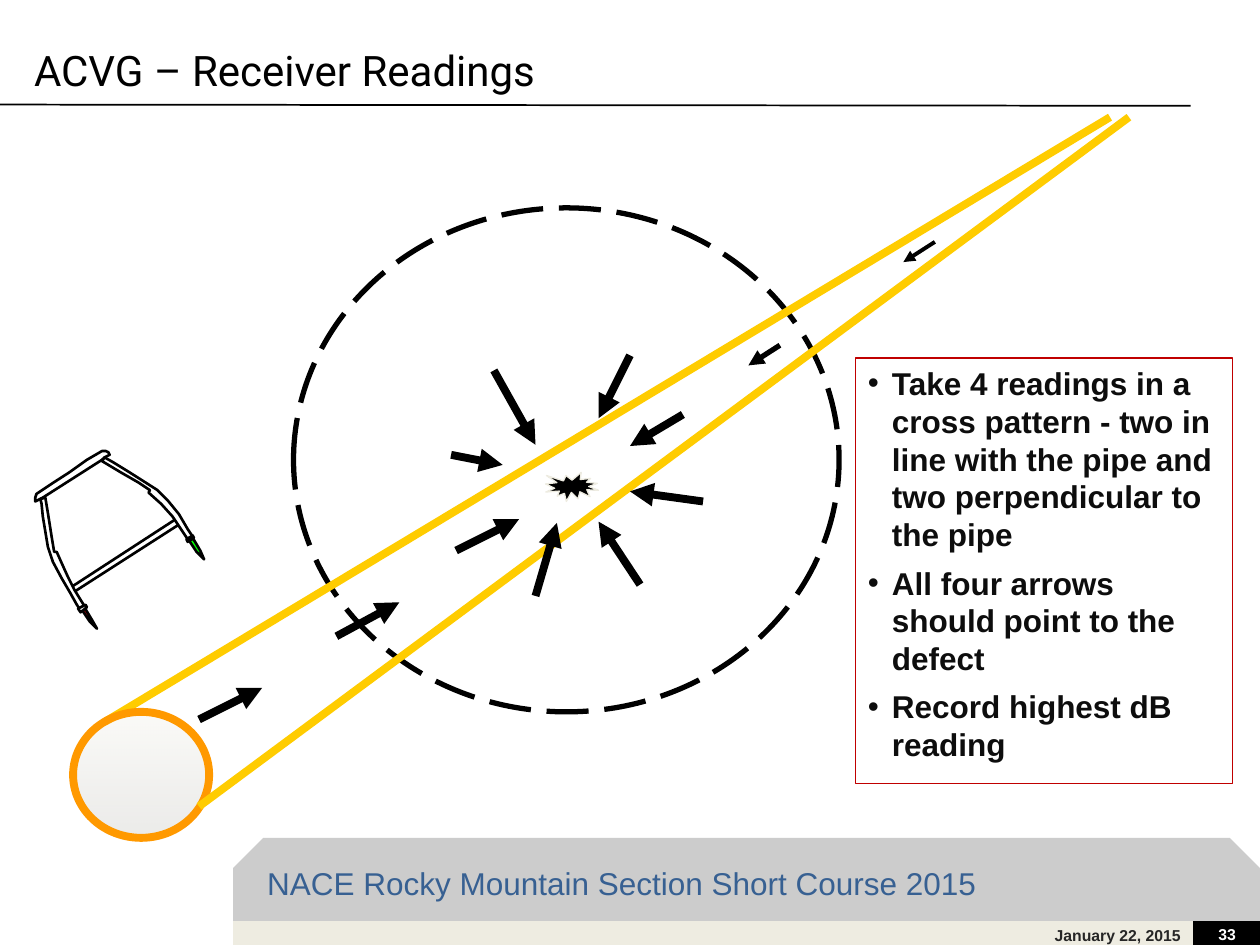
from dataclasses import dataclass
from pptx import Presentation
from pptx.dml.color import RGBColor
from pptx.enum.dml import MSO_LINE
from pptx.enum.shapes import MSO_CONNECTOR, MSO_SHAPE
from pptx.enum.text import MSO_ANCHOR, MSO_AUTO_SIZE, PP_ALIGN
from pptx.oxml.ns import qn
from pptx.util import Inches, Pt
from lxml import etree

STRAIGHT = MSO_CONNECTOR.STRAIGHT
RECT, OVAL = MSO_SHAPE.RECTANGLE, MSO_SHAPE.OVAL
SNIP, BURST = MSO_SHAPE.SNIP_2_SAME_RECTANGLE, MSO_SHAPE.EXPLOSION1
DASH = MSO_LINE.LONG_DASH
LEFT, MID, RIGHT = PP_ALIGN.LEFT, PP_ALIGN.CENTER, PP_ALIGN.RIGHT
TOP, CENTER, BOTTOM = MSO_ANCHOR.TOP, MSO_ANCHOR.MIDDLE, MSO_ANCHOR.BOTTOM
GROW = MSO_AUTO_SIZE.SHAPE_TO_FIT_TEXT


@dataclass(frozen=True)
class Theme:
    head: str = "Roboto"
    body: str = "Arial"
    black: str = "000000"
    white: str = "FFFFFF"
    ink: str = "0D0D0D"
    date: str = "262626"
    blue: str = "376092"
    grey: str = "CCCCCC"
    cream: str = "EEECE1"
    shade: str = "AAA9A1"
    red: str = "C00000"
    gold: str = "FFCC00"
    orange: str = "FF9900"
    tip_red: str = "FF0000"
    tip_green: str = "00FF00"
    big: int = 24
    mid: int = 18
    small: int = 9


T = Theme()

NOTES = (
    "Take 4 readings in a cross pattern - two in line with the pipe and two "
    "perpendicular to the pipe",
    "All four arrows should point to the defect",
    "Record highest dB reading",
)

# Each arrow: tail x, y, tip x, y, width
ARROWS = (
    # Along the pipe
    (1.58, 5.71, 2.08, 5.46, 4.5), (2.67, 5.05, 3.17, 4.78, 4.5),
    (3.62, 4.37, 4.12, 4.12, 4.5), (5.42, 3.29, 5, 3.54, 4.5),
    (6.19, 2.74, 5.94, 2.9, 3), (7.42, 1.92, 7.17, 2.08, 2.25),
    # Around the defect
    (5.08, 4.64, 4.75, 4.14, 4.5), (3.92, 2.94, 4.25, 3.53, 4.5),
    (4.25, 4.73, 4.42, 4.15, 4.5), (5.58, 3.98, 5, 3.9, 4.5),
    (5, 2.82, 4.75, 3.32, 4.5), (3.58, 3.61, 3.99, 3.69, 4.5),
)

# Receiver parts: fill and outline points
PARTS = (
    (T.tip_green, ((1.53, 4.27), (1.5, 4.29), (1.56, 4.38), (1.62, 4.44), (1.59, 4.37))),
    (T.tip_red, ((0.67, 4.82), (0.65, 4.84), (0.71, 4.93), (0.77, 4.99), (0.73, 4.92))),
    # Grip
    (None, ((0.83, 3.63), (0.87, 3.61), (0.86, 3.59), (0.84, 3.58), (0.81, 3.58),
            (0.69, 3.65), (0.55, 3.75), (0.41, 3.84), (0.29, 3.92), (0.28, 3.95),
            (0.28, 3.98), (0.32, 3.96), (0.34, 3.95), (0.81, 3.65))),
    # Left arm
    (None, ((0.32, 3.96), (0.33, 4), (0.34, 4.1), (0.36, 4.22), (0.38, 4.34),
            (0.42, 4.46), (0.49, 4.59), (0.56, 4.71), (0.61, 4.8), (0.63, 4.83),
            (0.67, 4.81), (0.59, 4.68), (0.54, 4.58), (0.49, 4.47), (0.45, 4.38),
            (0.43, 4.38), (0.41, 4.26), (0.38, 4.07), (0.36, 3.95))),
    # Right arm
    (None, ((0.83, 3.63), (0.9, 3.67), (1.03, 3.75), (1.14, 3.82), (1.25, 3.89),
            (1.33, 3.97), (1.42, 4.08), (1.49, 4.2), (1.53, 4.26), (1.49, 4.28),
            (1.43, 4.19), (1.37, 4.1), (1.28, 4), (1.18, 3.91), (1.19, 3.89),
            (1.1, 3.83), (0.96, 3.75), (0.81, 3.66))),
    # Collars
    (T.white, ((1.53, 4.25), (1.48, 4.28), (1.49, 4.3), (1.54, 4.27))),
    (T.white, ((0.68, 4.8), (0.62, 4.83), (0.64, 4.86), (0.69, 4.82))),
)
BARS = ((1.38, 4.13, 0.58, 4.65), (1.41, 4.17, 0.6, 4.69))


def rgb(code):
    return RGBColor.from_string(code)


def paint(item, fill=None, line=None, width=1.0):
    item.shadow.inherit = False
    if fill:
        item.fill.solid()
        item.fill.fore_color.rgb = rgb(fill)
    else:
        item.fill.background()
    if line:
        item.line.color.rgb = rgb(line)
        item.line.width = Pt(width)
    else:
        item.line.fill.background()


def shape(pool, kind, box, fill=None, line=None, width=1.0):
    item = pool.add_shape(kind, *map(Inches, box))
    paint(item, fill, line, width)
    return item


def stroke(pool, ends, color, width, arrow=False):
    item = pool.add_connector(STRAIGHT, *map(Inches, ends))
    item.line.color.rgb = rgb(color)
    item.line.width = Pt(width)
    if arrow:
        etree.SubElement(item.line._get_or_add_ln(), qn("a:tailEnd"), type="triangle")
    etree.SubElement(item.element.spPr, qn("a:effectLst"))


def outline(pool, points, fill):
    spots = [(Inches(x), Inches(y)) for x, y in points]
    pen = pool.build_freeform(*spots[0], scale=1.0)
    pen.add_line_segments(spots[1:], close=True)
    paint(pen.convert_to_shape(), fill, T.black, 1.5)


def write(para, words, size, color, bold=False, face=T.body, align=LEFT):
    para.alignment = align
    run = para.add_run()
    run.text = words
    font = run.font
    font.name, font.size, font.bold = face, Pt(size), bold
    font.color.rgb = rgb(color)


def label(pool, box, words, size, color, align, anchor=TOP, bold=False, wrap=True):
    frame = pool.add_textbox(*map(Inches, box)).text_frame
    frame.word_wrap = wrap
    frame.vertical_anchor = anchor
    write(frame.paragraphs[0], words, size, color, bold, align=align)
    return frame


def bullets(pool, box, notes):
    item = shape(pool, RECT, box, None, T.red, 0.75)
    frame = item.text_frame
    frame.word_wrap = True
    frame.vertical_anchor = TOP
    frame.auto_size = GROW
    for i, words in enumerate(notes):
        para = frame.paragraphs[0] if i == 0 else frame.add_paragraph()
        props = para._p.get_or_add_pPr()
        props.set("marL", str(Inches(0.19)))
        props.set("indent", str(-Inches(0.19)))
        etree.SubElement(props, qn("a:buFont"), typeface=T.body)
        etree.SubElement(props, qn("a:buChar"), char="•")
        if i < len(notes) - 1:
            para.space_after = Pt(6)
        write(para, words, T.mid, T.ink, True)


def mouth(pool, box):
    item = shape(pool, OVAL, box, None, T.orange, 4.5)
    item.fill.gradient()
    item.fill.gradient_angle = 270
    looks = ((T.cream, 24), (T.shade, 23))
    for i, (stop, (color, alpha)) in enumerate(zip(item.fill.gradient_stops, looks)):
        stop.position = i
        stop.color.rgb = rgb(color)
    tints = item.element.spPr.find(qn("a:gradFill")).iter(qn("a:srgbClr"))
    for tint, (color, alpha) in zip(tints, looks):
        etree.SubElement(tint, qn("a:alpha"), val=str(alpha * 1000))


def heading(slide, words):
    title = slide.shapes.title
    title.left, title.top, title.width, title.height = map(Inches, (0.17, 0.17, 8.5, 0.76))
    title.text_frame.vertical_anchor = CENTER
    write(title.text_frame.paragraphs[0], words, T.big, T.black, face=T.head)


def main():
    deck = Presentation()
    deck.slide_width, deck.slide_height = Inches(10), Inches(7.5)
    slide = deck.slides.add_slide(deck.slide_layouts[5])
    pool = slide.shapes

    # Footer bands and title rule
    shape(pool, RECT, (1.85, 7.3, 8.15, 0.2), T.cream)
    shape(pool, RECT, (9.47, 7.3, 0.53, 0.2), T.black)
    band = shape(pool, SNIP, (1.85, 6.65, 8.15, 0.66), T.grey)
    band.adjustments[0], band.adjustments[1] = 0.363, 0
    stroke(pool, (0, 0.83, 9.45, 0.84), T.black, 1)

    # Search ring
    ring = shape(pool, OVAL, (2.33, 1.65, 4.33, 4), None, T.black, 3)
    ring.line.dash_style = DASH

    # Words
    label(pool, (7.91, 7.37, 1.56, 0.18), "January 22, 2015", T.small, T.date,
          RIGHT, BOTTOM, True, False)
    label(pool, (9.56, 7.39, 0.36, 0.15), "33", T.small, T.white,
          MID, BOTTOM, True, False)
    heading(slide, "ACVG – Receiver Readings")
    course = label(pool, (0.43, 6.81, 9.01, 0.4),
                   "NACE Rocky Mountain Section Short Course 2015", T.mid, T.blue, MID)
    course.auto_size = GROW
    bullets(pool, (6.79, 2.84, 2.99, 3.38), NOTES)

    # Pipe
    stroke(pool, (0.83, 5.73, 8.81, 0.93), T.gold, 4.5)
    mouth(pool, (0.58, 5.65, 1.08, 1))
    stroke(pool, (1.58, 6.4, 8.96, 0.93), T.gold, 4.5)

    # Readings
    for *ends, width in ARROWS:
        stroke(pool, ends, T.black, width, True)

    # Receiver
    frame = pool.add_group_shape().shapes
    for fill, points in PARTS:
        outline(frame, points, fill)
    for ends in BARS:
        stroke(frame, ends, T.black, 1.5)

    # Defect
    shape(pool, BURST, (4.33, 3.75, 0.42, 0.23), T.black, T.cream, 0.75)
    deck.save("out.pptx")


if __name__ == "__main__":
    main()
